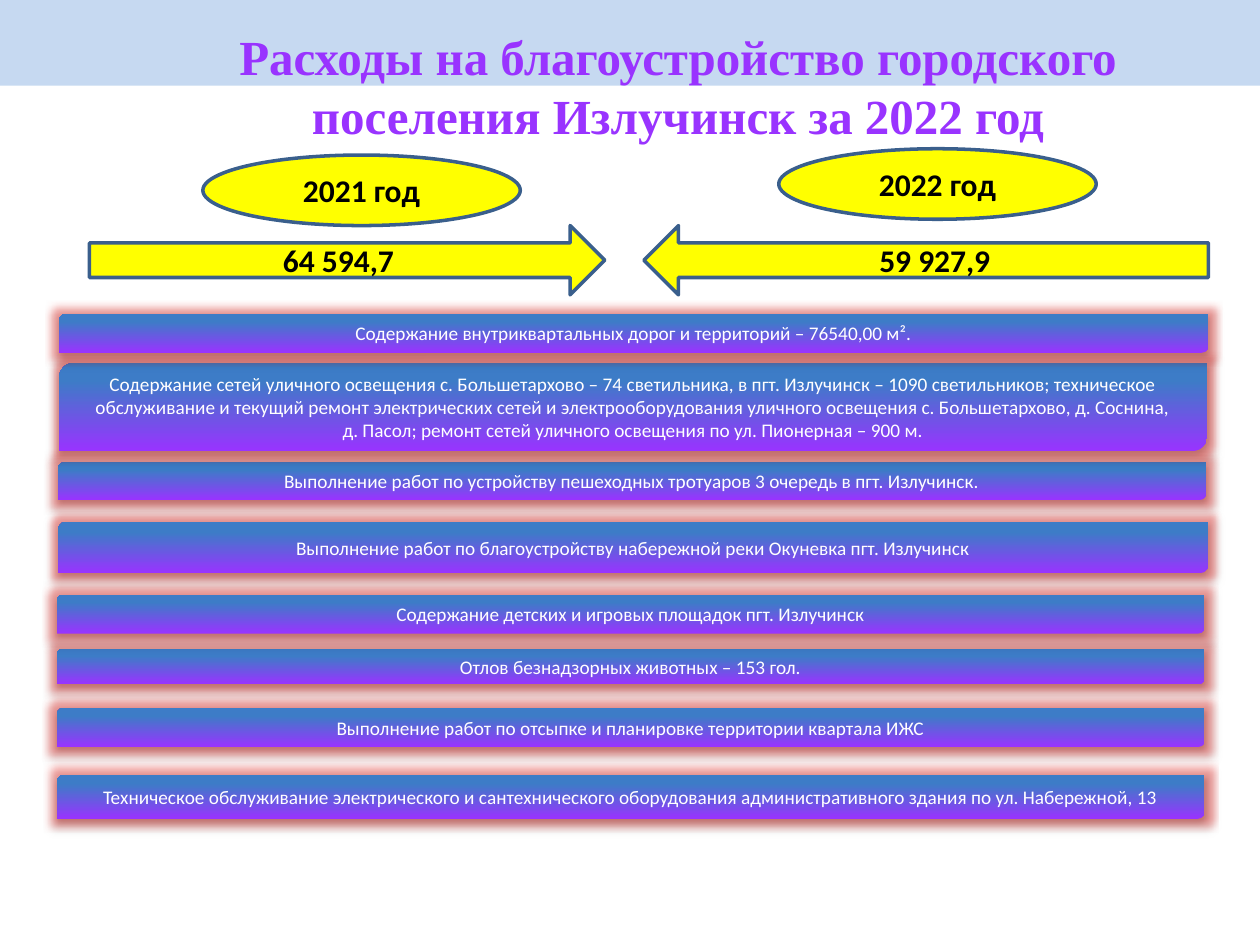
from lxml import etree
from pptx import Presentation
from pptx.dml.color import RGBColor
from pptx.enum.shapes import MSO_SHAPE
from pptx.enum.text import MSO_ANCHOR, PP_ALIGN
from pptx.oxml import parse_xml
from pptx.oxml.ns import nsdecls
from pptx.util import Pt

VIOLET, BLUE, YELLOW, OUTLINE = "9933FF", "3D7CC7", "FFFF00", "3A5F8C"

# left, top, width, height, text
WORKS = [
    (33.8, 179.3, 656.6, 22.3, "Содержание внутриквартальных дорог и территорий – 76540,00 м²."),
    (33.8, 207.4, 656, 50.4,
     "Содержание сетей уличного освещения с. Большетархово – 74 светильника, "
     "в пгт. Излучинск – 1090 светильников; техническое обслуживание и текущий ремонт "
     "электрических сетей и электрооборудования уличного освещения с. Большетархово, "
     "д. Соснина,\vд. Пасол; ремонт сетей уличного освещения по ул. Пионерная – 900 м."),
    (33.1, 264.2, 656, 21.6,
     "Выполнение работ по устройству пешеходных тротуаров 3 очередь в пгт. Излучинск."),
    (33.1, 298.1, 657.4, 29.5,
     "Выполнение работ по благоустройству набережной реки Окуневка пгт. Излучинск"),
    (32.4, 339.8, 656, 22.3, "Содержание детских и игровых площадок пгт. Излучинск"),
    (32.4, 370.8, 656, 20.2, "Отлов безнадзорных животных – 153 гол."),
    (32.4, 404.6, 656, 22.3,
     "Выполнение работ по отсыпке и планировке территории квартала ИЖС"),
    (32.4, 442.8, 656, 25.2,
     "Техническое обслуживание электрического и сантехнического оборудования "
     "административного здания по ул. Набережной, 13"),
]


def rgb(color):
    return RGBColor.from_string(color)


def write(shape, text, size=11, color="FFFFFF", bold=False, font="Calibri",
          anchor=MSO_ANCHOR.MIDDLE, margin_top=0, line_spacing=None):
    frame = shape.text_frame
    frame.word_wrap = True
    frame.vertical_anchor = anchor
    frame.margin_top, frame.margin_bottom = Pt(margin_top), 0
    frame.text = text
    paragraph = frame.paragraphs[0]
    paragraph.alignment = PP_ALIGN.CENTER
    if line_spacing:
        paragraph.line_spacing = Pt(line_spacing)
    for run in paragraph.runs:
        run.font.name, run.font.size, run.font.bold = font, Pt(size), bold
        run.font.color.rgb = rgb(color)


def add_figure(slide, preset, left, top, width, height, fill=None, line=None):
    figure = slide.shapes.add_shape(preset, Pt(left), Pt(top), Pt(width), Pt(height))
    figure.shadow.inherit = False
    if fill:
        figure.fill.solid()
        figure.fill.fore_color.rgb = rgb(fill)
    if line:
        figure.line.color.rgb = rgb(line)
        figure.line.width = Pt(2)
    else:
        figure.line.fill.background()
    return figure


def add_title(slide, text):
    title = slide.shapes.add_textbox(Pt(63.4), Pt(10), Pt(648), Pt(90))
    write(title, text, size=28, color=VIOLET, bold=True, font="Times New Roman",
          anchor=MSO_ANCHOR.TOP, margin_top=5, line_spacing=33.7)


def add_yellow(slide, preset, left, top, width, height, text):
    figure = add_figure(slide, preset, left, top, width, height, YELLOW, OUTLINE)
    write(figure, text, size=18, color="000000", bold=True)


def add_glow_and_shadow(shape):
    properties = shape._element.spPr
    effects = properties.find("{http://schemas.openxmlformats.org/drawingml/2006/main}effectLst")
    for effect in (
        f'<a:glow {nsdecls("a")} rad="101600"><a:srgbClr val="C0504D">'
        '<a:satMod val="175000"/><a:alpha val="40000"/></a:srgbClr></a:glow>',
        f'<a:outerShdw {nsdecls("a")} blurRad="39370" dist="22860" dir="5400000" '
        'rotWithShape="0"><a:srgbClr val="000000"><a:alpha val="35000"/>'
        '</a:srgbClr></a:outerShdw>',
    ):
        effects.append(parse_xml(effect))


def add_work(slide, left, top, width, height, text):
    bar = add_figure(slide, MSO_SHAPE.ROUND_2_DIAG_RECTANGLE, left, top, width, height)
    bar.fill.gradient()
    bar.fill.gradient_angle = 90
    for stop, color, position in zip(bar.fill.gradient_stops, (VIOLET, BLUE), (0, 0.8)):
        stop.color.rgb = rgb(color)
        stop.position = position
    add_glow_and_shadow(bar)
    write(bar, text)


def main():
    presentation = Presentation()
    presentation.slide_width, presentation.slide_height = Pt(720), Pt(540)
    slide = presentation.slides.add_slide(presentation.slide_layouts[6])

    add_figure(slide, MSO_SHAPE.RECTANGLE, 0, 0, 720, 49, "C6D9F1")
    add_title(slide, "Расходы на благоустройство городского поселения Излучинск за 2022 год")
    add_yellow(slide, MSO_SHAPE.RIGHT_ARROW, 51.1, 128.9, 294.5, 39.6, "64 594,7")
    add_yellow(slide, MSO_SHAPE.LEFT_ARROW, 367.9, 128.9, 322.6, 39.6, "59 927,9")
    add_yellow(slide, MSO_SHAPE.OVAL, 115.9, 88.6, 181.4, 40.3, "2021 год")
    add_yellow(slide, MSO_SHAPE.OVAL, 445, 85, 181.4, 40.3, "2022 год")
    for work in reversed(WORKS):
        add_work(slide, *work)

    presentation.save("out.pptx")


if __name__ == "__main__":
    main()
